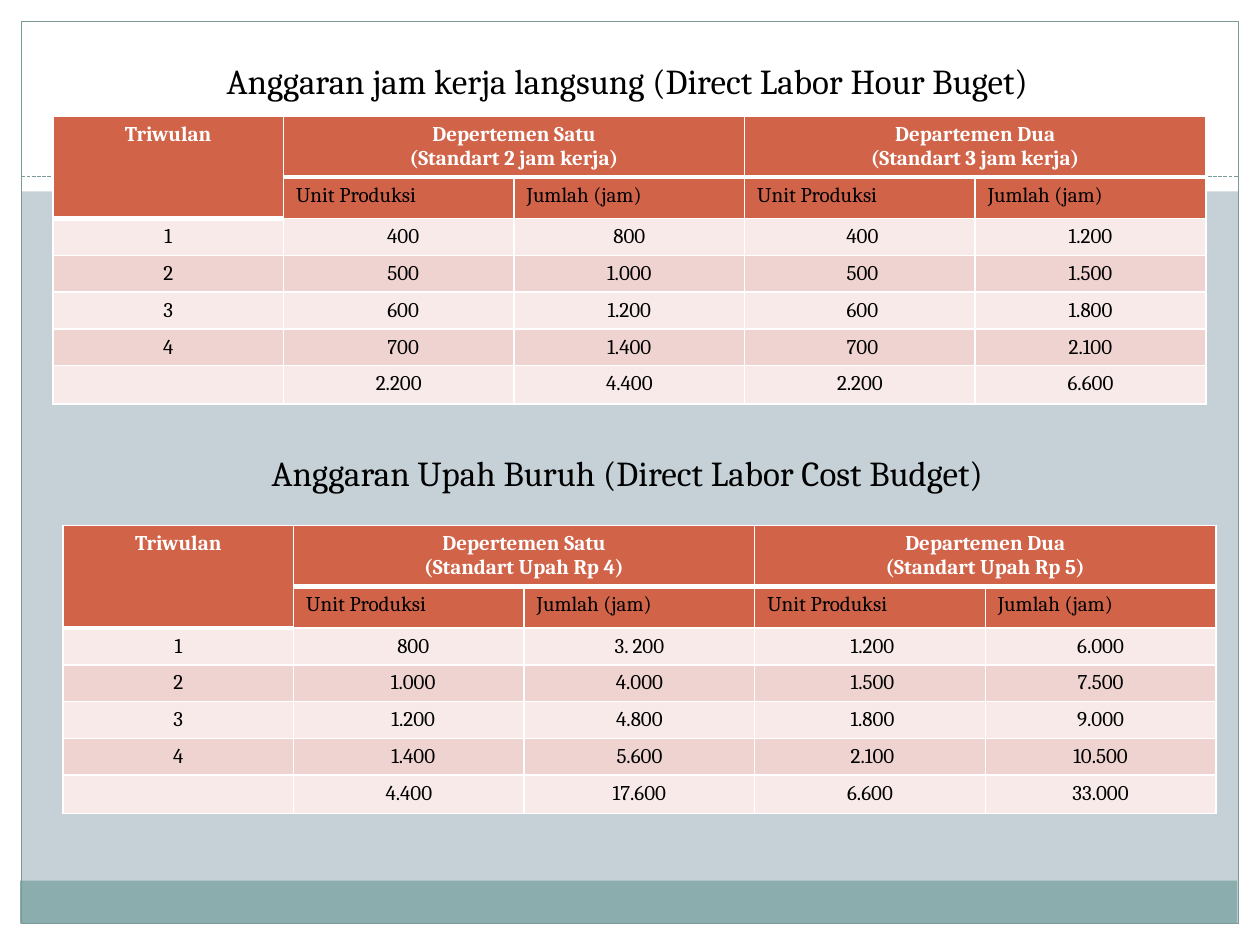
"""Build a slide with two direct labor budget tables."""
from lxml import etree
from pptx import Presentation
from pptx import util as u
from pptx.dml import color
from pptx.enum import dml, shapes, text
from pptx.oxml import ns

HEADER, BANDS = "D16349", ("F7EAE9", "EED3D0")
TEAL, WHITE, BLACK = "7C999A", "FFFFFF", "000000"
COLUMN_WIDTH = 1.83
ROW_HEIGHTS = [0.48, 0.33] + [0.29] * 5
UNIT_NUDGE = {1: 0.07, 3: 0.04}
BANDS_OF_PAGE = [
    (0, 7.33, 10, 0.17, WHITE),
    (0, 0, 10, 1.52, WHITE),
    (0, 0, 0.17, 7.5, WHITE),
    (9.83, 0, 0.17, 7.5, WHITE),
    (0.16, 6.99, 9.66, 0.34, "8CADAE"),
]
HOURS = [
    ("1", "400", "800", "400", "1.200"),
    ("2", "500", "1.000", "500", "1.500"),
    ("3", "600", "1.200", "600", "1.800"),
    ("4", "700", "1.400", "700", "2.100"),
    ("", "2.200", "4.400", "2.200", "6.600"),
]
COSTS = [
    ("1", "800", "3. 200", "1.200", "6.000"),
    ("2", "1.000", "4.000", "1.500", "7.500"),
    ("3", "1.200", "4.800", "1.800", "9.000"),
    ("4", "1.400", "5.600", "2.100", "10.500"),
    ("", "4.400", "17.600", "6.600", "33.000"),
]


def rgb(value):
    """Turn a hex string into a colour."""
    return color.RGBColor.from_string(value)


def apply(target, values):
    """Set each attribute named in a dict of format values."""
    for name, value in values.items():
        setattr(target, name, value)


class Page:
    """Hold the style and the current slide."""

    def __init__(self, deck):
        """Start a slide with a plain background and no title."""
        self.font = "Cambria"
        self.slide = deck.slides.add_slide(deck.slide_layouts[1])
        title = self.slide.shapes.title.element
        title.getparent().remove(title)
        self.fill(self.slide.background, "C5D1D7")

    def fill(self, target, value):
        """Fill an object with one colour."""
        target.fill.solid()
        target.fill.fore_color.rgb = rgb(value)

    def rectangle(self, left, top, width, height, fill=None, line=None):
        """Add a rectangle with an optional fill and outline."""
        lengths = map(u.Inches, (left, top, width, height))
        box = self.slide.shapes.add_shape(shapes.MSO_SHAPE.RECTANGLE, *lengths)
        box.shadow.inherit = False
        if fill:
            self.fill(box, fill)
        else:
            box.fill.background()
        if line:
            box.line.color.rgb = rgb(line)
            box.line.width = u.Pt(0.75)
        else:
            box.line.fill.background()

    def rule(self, left, right, top):
        """Add a dashed horizontal line."""
        ends = map(u.Inches, (left, top, right, top))
        rule = self.slide.shapes.add_connector(shapes.MSO_CONNECTOR.STRAIGHT, *ends)
        rule.line.color.rgb = rgb(TEAL)
        apply(rule.line, {"width": u.Pt(0.75), "dash_style": dml.MSO_LINE.SQUARE_DOT})
        etree.SubElement(rule.element.spPr, ns.qn("a:effectLst"))

    def paragraph(self, para, words, size, ink, bold=False, align=text.PP_ALIGN.CENTER):
        """Fill one styled paragraph."""
        para.alignment = align
        span = para.add_run()
        span.text = words
        apply(span.font, {"name": self.font, "size": u.Pt(size), "bold": bold})
        span.font.color.rgb = rgb(ink)

    def headings(self, lines, gap):
        """Put the table headings in the body placeholder, a gap apart."""
        box = self.slide.placeholders[1]
        self.slide.shapes.element.append(box.element)
        apply(box, {"left": u.Inches(0.33), "top": u.Inches(0.42),
                    "width": u.Inches(9.3), "height": u.Inches(6.25)})
        apply(box.text_frame, {"word_wrap": True,
                               "auto_size": text.MSO_AUTO_SIZE.NONE,
                               "vertical_anchor": text.MSO_ANCHOR.TOP})
        for index, words in enumerate(lines):
            para = box.text_frame.add_paragraph() if index else box.text_frame.paragraphs[0]
            self.paragraph(para, words, 20, BLACK)
            para.space_before = u.Pt(gap if index else 4)
            properties = para._p.get_or_add_pPr()
            properties.set("marL", "0")
            properties.set("indent", "0")
            etree.SubElement(properties, ns.qn("a:buNone"))

    def borders(self, cell, bottom):
        """Draw white borders round a cell."""
        properties = cell._tc.get_or_add_tcPr()
        for side, width in (("L", 1), ("R", 1), ("T", 1), ("B", bottom)):
            line = etree.SubElement(properties, ns.qn(f"a:ln{side}"), w=str(int(u.Pt(width))))
            solid = etree.SubElement(line, ns.qn("a:solidFill"))
            etree.SubElement(solid, ns.qn("a:srgbClr"), val=WHITE)

    def cell(self, cell, words, fill, bottom=1, ink=BLACK, bold=False,
             align=text.PP_ALIGN.CENTER):
        """Style a cell and fill in its lines."""
        self.borders(cell, bottom)
        self.fill(cell, fill)
        for index, line in enumerate(words.split("\n")):
            frame = cell.text_frame
            para = frame.add_paragraph() if index else frame.paragraphs[0]
            if line:
                self.paragraph(para, line, 12, ink, bold, align)
            else:
                para.font.size = u.Pt(12)

    def table(self, left, top, standards, rows):
        """Add a budget table with a two-row header."""
        size = (5 * COLUMN_WIDTH, sum(ROW_HEIGHTS))
        lengths = map(u.Inches, (left, top, *size))
        grid = self.slide.shapes.add_table(len(ROW_HEIGHTS), 5, *lengths).table
        for column in grid.columns:
            column.width = u.Inches(COLUMN_WIDTH)
        for row, height in zip(grid.rows, ROW_HEIGHTS):
            row.height = u.Inches(height)
        heads = ("Triwulan", f"Depertemen Satu\n({standards[0]})", "",
                 f"Departemen Dua\n({standards[1]})", "")
        for column, words in enumerate(heads):
            self.cell(grid.cell(0, column), words, HEADER, 3, WHITE, True)
        for column, words in enumerate(("",) + ("Unit Produksi", "Jumlah (jam)") * 2):
            self.cell(grid.cell(1, column), words, HEADER, 1 if column else 3,
                      align=text.PP_ALIGN.LEFT)
        for index, values in enumerate(rows):
            for column, words in enumerate(values):
                cell = grid.cell(index + 2, column)
                self.cell(cell, words, BANDS[index % 2])
                if values[0]:
                    cell.margin_left = u.Inches(0.1 + UNIT_NUDGE.get(column, 0))
        grid.cell(0, 0).merge(grid.cell(1, 0))
        for column in (1, 3):
            grid.cell(0, column).merge(grid.cell(0, column + 1))


def main():
    """Build and save the deck."""
    deck = Presentation()
    apply(deck, {"slide_width": u.Inches(10), "slide_height": u.Inches(7.5)})
    page = Page(deck)
    for band in BANDS_OF_PAGE:
        page.rectangle(*band)
    page.rectangle(0.17, 0.17, 9.66, 7.16, line=TEAL)
    page.rule(0.17, 9.83, 1.4)
    page.headings(("Anggaran jam kerja langsung (Direct Labor Hour Buget)",
                   "Anggaran Upah Buruh (Direct Labor Cost Budget)"), 200)
    page.table(0.42, 0.92, ("Standart 2 jam kerja", "Standart 3 jam kerja"), HOURS)
    page.table(0.5, 4.17, ("Standart Upah Rp 4", "Standart Upah Rp 5"), COSTS)
    deck.save("out.pptx")


if __name__ == "__main__":
    main()
